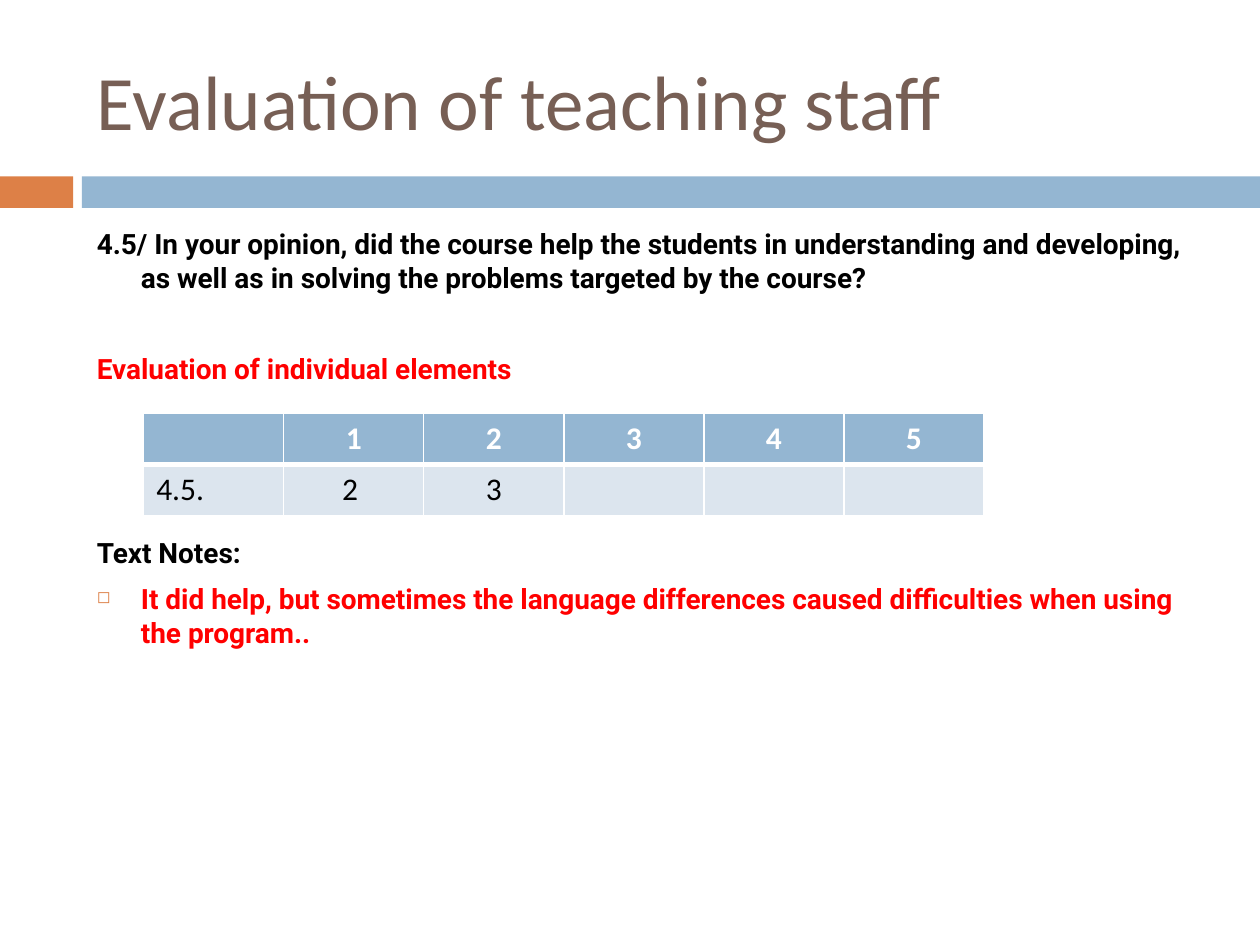
import lxml.etree
import pptx
import pptx.dml.color
import pptx.enum.shapes
import pptx.enum.text
import pptx.oxml.ns
import pptx.util
from pptx.util import Inches

ORANGE, BLUE, PALE_BLUE = "DD8047", "94B6D2", "DCE5EE"
BROWN, RED, BLACK, WHITE = "775F55", "FF0000", "000000", "FFFFFF"
CENTER = pptx.enum.text.PP_ALIGN.CENTER
qn = pptx.oxml.ns.qn


def color(hex_value):
    return pptx.dml.color.RGBColor.from_string(hex_value)


def write(paragraph, text, size=16, font="Roboto", fill=BLACK, bold=False,
          align=None, before=0, hanging=0, bullet=None):
    run = paragraph.add_run()
    run.text = text
    run.font.size = pptx.util.Pt(size)
    run.font.name = font
    run.font.bold = bold
    run.font.color.rgb = color(fill)
    paragraph.alignment = align
    paragraph.space_before = pptx.util.Pt(before)
    properties = paragraph._p.get_or_add_pPr()
    if hanging:
        properties.set("marL", str(Inches(hanging)))
        properties.set("indent", str(-Inches(hanging)))
    if bullet:
        bullet_color = lxml.etree.SubElement(properties, qn("a:buClr"))
        lxml.etree.SubElement(bullet_color, qn("a:srgbClr"), val=ORANGE)
        lxml.etree.SubElement(properties, qn("a:buSzPct"), val="60000")
        lxml.etree.SubElement(properties, qn("a:buChar"), char=bullet)


deck = pptx.Presentation()
deck.slide_width, deck.slide_height = Inches(10), Inches(7.5)
slide = deck.slides.add_slide(deck.slide_layouts[6])

# Divider band
for left, width, fill in [(0, 0.58, ORANGE), (0.65, 9.35, BLUE)]:
    band = slide.shapes.add_shape(
        pptx.enum.shapes.MSO_SHAPE.RECTANGLE,
        Inches(left), Inches(1.4), Inches(width), Inches(0.25))
    band.shadow.inherit = False
    band.fill.solid()
    band.fill.fore_color.rgb = color(fill)
    band.line.fill.background()

# Title
title = slide.shapes.add_textbox(
    Inches(0.67), Inches(0.25), Inches(8.92), Inches(1.08)).text_frame
title.word_wrap = True
title.vertical_anchor = pptx.enum.text.MSO_ANCHOR.MIDDLE
write(title.paragraphs[0], "Evaluation of teaching staff",
      size=44, font="Calibri", fill=BROWN)

# Question, heading and notes; the space before "Text Notes:" holds the table
body = slide.shapes.add_textbox(
    Inches(0.67), Inches(1.75), Inches(9.05), Inches(5.46)).text_frame
body.word_wrap = True
body_lines = [
    ("4.5/ In your opinion, did the course help the students in understanding "
     "and developing, as well as in solving the problems targeted by the course?",
     BLACK, 7, None),
    ("Evaluation of individual elements", RED, 33, None),
    ("Text Notes:", BLACK, 86, None),
    ("It did help, but sometimes the language differences caused difficulties "
     "when using the program..", RED, 7, "◻"),
]
for index, (text, fill, before, bullet) in enumerate(body_lines):
    paragraph = body.add_paragraph() if index else body.paragraphs[0]
    write(paragraph, text, fill=fill, bold=True, before=before,
          hanging=0.35, bullet=bullet)

# Ratings table
ratings = [["", "1", "2", "3", "4", "5"],
           ["4.5.", "2 ", "3", "", "", ""]]
table = slide.shapes.add_table(
    2, 6, Inches(1.14), Inches(3.28), Inches(6.67), Inches(0.81)).table
for row, values in enumerate(ratings):
    header = row == 0
    for column, value in enumerate(values):
        cell = table.cell(row, column)
        paragraph = cell.text_frame.paragraphs[0]
        paragraph.font.size = pptx.util.Pt(18)
        if value:
            write(paragraph, value, size=18, font="Calibri", bold=header,
                  fill=WHITE if header else BLACK,
                  align=CENTER if column else None)
        # White rules, thicker under the header
        widths = {"lnL": 1, "lnR": 1, "lnT": 1 if header else 3,
                  "lnB": 3 if header else 1}
        for side, points in widths.items():
            rule = lxml.etree.SubElement(
                cell._tc.get_or_add_tcPr(), qn("a:" + side),
                w=str(pptx.util.Pt(points)))
            rule_fill = lxml.etree.SubElement(rule, qn("a:solidFill"))
            lxml.etree.SubElement(rule_fill, qn("a:srgbClr"), val=WHITE)
        cell.fill.solid()
        cell.fill.fore_color.rgb = color(BLUE if header else PALE_BLUE)

deck.save("out.pptx")
